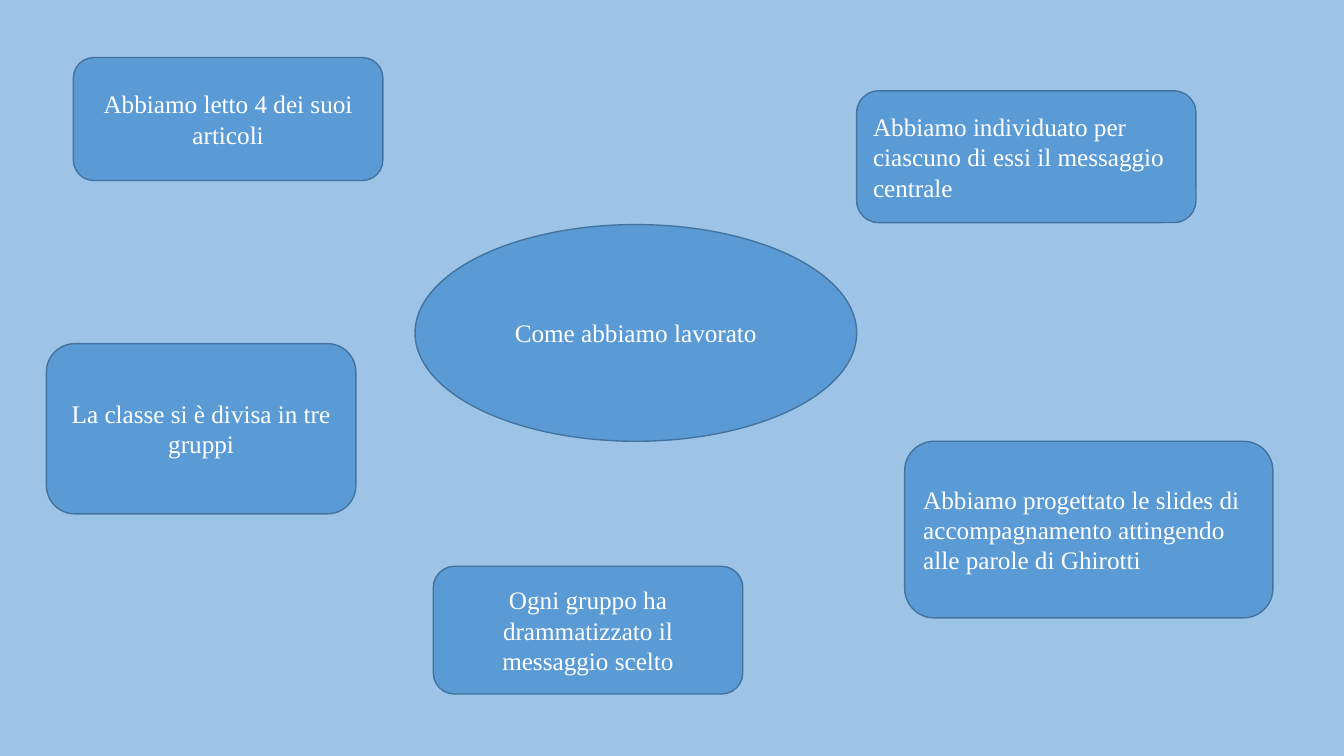
from pptx import Presentation
from pptx.dml.color import RGBColor
from pptx.enum.shapes import MSO_SHAPE as SHAPE
from pptx.enum.text import MSO_ANCHOR as ANCHOR, PP_ALIGN as ALIGN
from pptx.util import Cm, Pt

COLORS = {"background": "9DC3E6", "fill": "5B9BD5", "line": "43739E", "text": "FFFFFF"}
FONT = "Times New Roman"
STEP_W = 7.8


def rgb(name):
    return RGBColor.from_string(COLORS[name])


prs = Presentation()
prs.slide_width, prs.slide_height = Cm(33.87), Cm(19.05)
s = prs.slides.add_slide(prs.slide_layouts[6])
s.background.fill.solid()
s.background.fill.fore_color.rgb = rgb("background")

# shape, left, top, width, height (cm), alignment, text
bubbles = [
    (SHAPE.OVAL, 10.46, 5.66, 11.13, 5.46, ALIGN.CENTER,
     "Come abbiamo lavorato"),
    (SHAPE.ROUNDED_RECTANGLE, 1.85, 1.45, STEP_W, 3.1, ALIGN.CENTER,
     "Abbiamo letto 4 dei suoi articoli"),
    (SHAPE.ROUNDED_RECTANGLE, 21.59, 2.29, 8.55, 3.32, ALIGN.LEFT,
     "Abbiamo individuato per ciascuno di essi il messaggio centrale"),
    (SHAPE.ROUNDED_RECTANGLE, 1.17, 8.66, STEP_W, 4.29, ALIGN.CENTER,
     "La classe si è divisa in tre gruppi"),
    (SHAPE.ROUNDED_RECTANGLE, 22.8, 11.12, 9.28, 4.45, ALIGN.LEFT,
     "Abbiamo progettato le slides di accompagnamento attingendo alle parole di Ghirotti"),
    (SHAPE.ROUNDED_RECTANGLE, 10.92, 14.27, STEP_W, 3.22, ALIGN.CENTER,
     "Ogni gruppo ha drammatizzato il messaggio scelto"),
]

for kind, left, top, width, height, align, text in bubbles:
    sp = s.shapes.add_shape(kind, Cm(left), Cm(top), Cm(width), Cm(height))
    sp.shadow.inherit = False
    sp.fill.solid()
    sp.fill.fore_color.rgb = rgb("fill")
    sp.line.color.rgb = rgb("line")
    sp.line.width = Pt(1)
    tf = sp.text_frame
    tf.word_wrap = True
    tf.vertical_anchor = ANCHOR.MIDDLE
    p = tf.paragraphs[0]
    p.alignment = align
    r = p.add_run()
    r.text = text
    r.font.name = FONT
    r.font.size = Pt(18)
    r.font.color.rgb = rgb("text")

prs.save("out.pptx")
